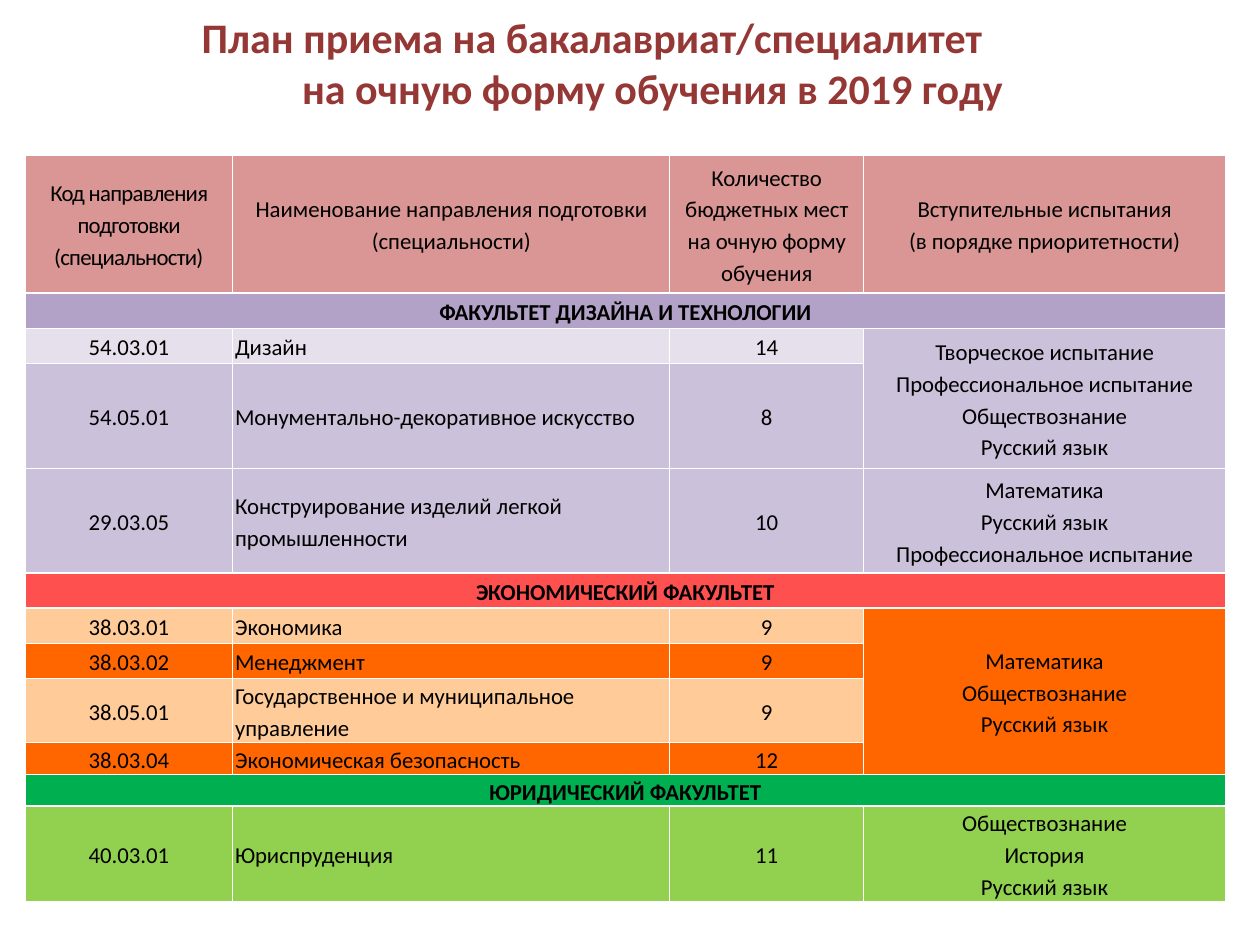
"""Builds the 2019 full-time admission plan slide with its table of programmes."""
from lxml import etree
from pptx import Presentation
from pptx import util as u
from pptx.dml.color import RGBColor
from pptx.enum import text
from pptx.oxml.ns import qn


def set_font(paragraph, color, **values):
    for run in paragraph.runs:
        for name, value in {"name": "Calibri", **values}.items():
            setattr(run.font, name, value)
        run.font.color.rgb = RGBColor.from_string(color)


def paint(cell, color):
    cell.fill.solid()
    cell.fill.fore_color.rgb = RGBColor.from_string(color)


deck = Presentation()
deck.slide_width, deck.slide_height = u.Cm(25.4), u.Cm(19.05)
slide = deck.slides.add_slide(deck.slide_layouts[5])

heading = slide.shapes.title
for name, length in {"left": 0, "top": 0, "width": 25.4, "height": 2.51}.items():
    setattr(heading, name, u.Cm(length))
frame = heading.text_frame
frame.text = "План приема на бакалавриат/специалитет\nна очную форму обучения в 2019 году"
frame.word_wrap = True
frame.auto_size = text.MSO_AUTO_SIZE.NONE
frame.vertical_anchor = text.MSO_ANCHOR.MIDDLE
frame.margin_left, frame.margin_right = u.Cm(0.25), u.Cm(1.78)
for line in frame.paragraphs:
    line.alignment = text.PP_ALIGN.CENTER
    set_font(line, "953735", size=u.Pt(24), bold=True)
second_line = frame.paragraphs[1]._p.get_or_add_pPr()
second_line.set("marL", str(u.Cm(2.44)))
second_line.set("indent", "0")

column_widths = [4.19, 8.81, 3.91, 7.29]
plan = [
    (2.79, "D99694", ["Код направления подготовки (специальности)",
                      "Наименование направления подготовки (специальности)",
                      "Количество бюджетных мест на очную форму обучения",
                      "Вступительные испытания\n(в порядке приоритетности)"]),
    (0.71, "B3A2C7", ["ФАКУЛЬТЕТ ДИЗАЙНА И ТЕХНОЛОГИИ"]),
    (0.71, "E6E0EC", ["54.03.01", "Дизайн", "14",
                      "Творческое испытание\nПрофессиональное испытание\nОбществознание\nРусский язык"]),
    (2.11, "CCC1DA", ["54.05.01", "Монументально-декоративное искусство", "8"]),
    (2.11, "CCC1DA", ["29.03.05", "Конструирование изделий легкой промышленности", "10",
                      "Математика\nРусский язык\nПрофессиональное испытание"]),
    (0.71, "FF5050", ["ЭКОНОМИЧЕСКИЙ ФАКУЛЬТЕТ"]),
    (0.71, "FFCC99", ["38.03.01", "Экономика", "9", "Математика\nОбществознание\nРусский язык"]),
    (0.71, "FF6600", ["38.03.02", "Менеджмент", "9"]),
    (1.22, "FFCC99", ["38.05.01", "Государственное и муниципальное управление", "9"]),
    (0.64, "FF6600", ["38.03.04", "Экономическая безопасность", "12"]),
    (0.64, "00B050", ["ЮРИДИЧЕСКИЙ ФАКУЛЬТЕТ"]),
    (1.91, "92D050", ["40.03.01", "Юриспруденция", "11", "Обществознание\nИстория\nРусский язык"]),
]
shared_exams = {2: 3, 6: 9}
cell_format = {"margin_left": u.Cm(0.05), "margin_right": u.Cm(0.05), "margin_top": 0,
               "margin_bottom": 0, "vertical_anchor": text.MSO_ANCHOR.MIDDLE}

admission = slide.shapes.add_table(
    len(plan), len(column_widths), u.Cm(0.5), u.Cm(3.12),
    u.Cm(sum(column_widths)), u.Cm(sum(height for height, _, _ in plan))).table
for column, width in zip(admission.columns, column_widths):
    column.width = u.Cm(width)

for row, (height, color, entries) in enumerate(plan):
    admission.rows[row].height = u.Cm(height)
    is_faculty = len(entries) == 1
    for col in range(len(column_widths)):
        cell = admission.cell(row, col)
        for name, value in cell_format.items():
            setattr(cell, name, value)
        paint(cell, color)
        for position, side in enumerate(["lnL", "lnR", "lnT", "lnB"]):
            border = etree.Element(qn(f"a:{side}"), w=str(u.Pt(1)))
            border_fill = etree.SubElement(border, qn("a:solidFill"))
            etree.SubElement(border_fill, qn("a:srgbClr"), val="FFFFFF")
            cell._tc.tcPr.insert(position, border)
        cell.text = entries[col] if col < len(entries) else ""
        is_programme = col == 1 and row > 0
        for line in cell.text_frame.paragraphs:
            line.alignment = text.PP_ALIGN.LEFT if is_programme else text.PP_ALIGN.CENTER
            line.line_spacing = 1.15
            set_font(line, "000000", size=u.Pt(13), bold=is_faculty)
    if is_faculty:
        admission.cell(row, 0).merge(admission.cell(row, 3))

for first, last in shared_exams.items():
    exams = admission.cell(first, 3)
    exams.merge(admission.cell(last, 3))
    paint(exams, plan[first + 1][1])

for run in admission.cell(0, 0).text_frame.paragraphs[0].runs:
    run.font._element.set("spc", "-40")

deck.save("out.pptx")
